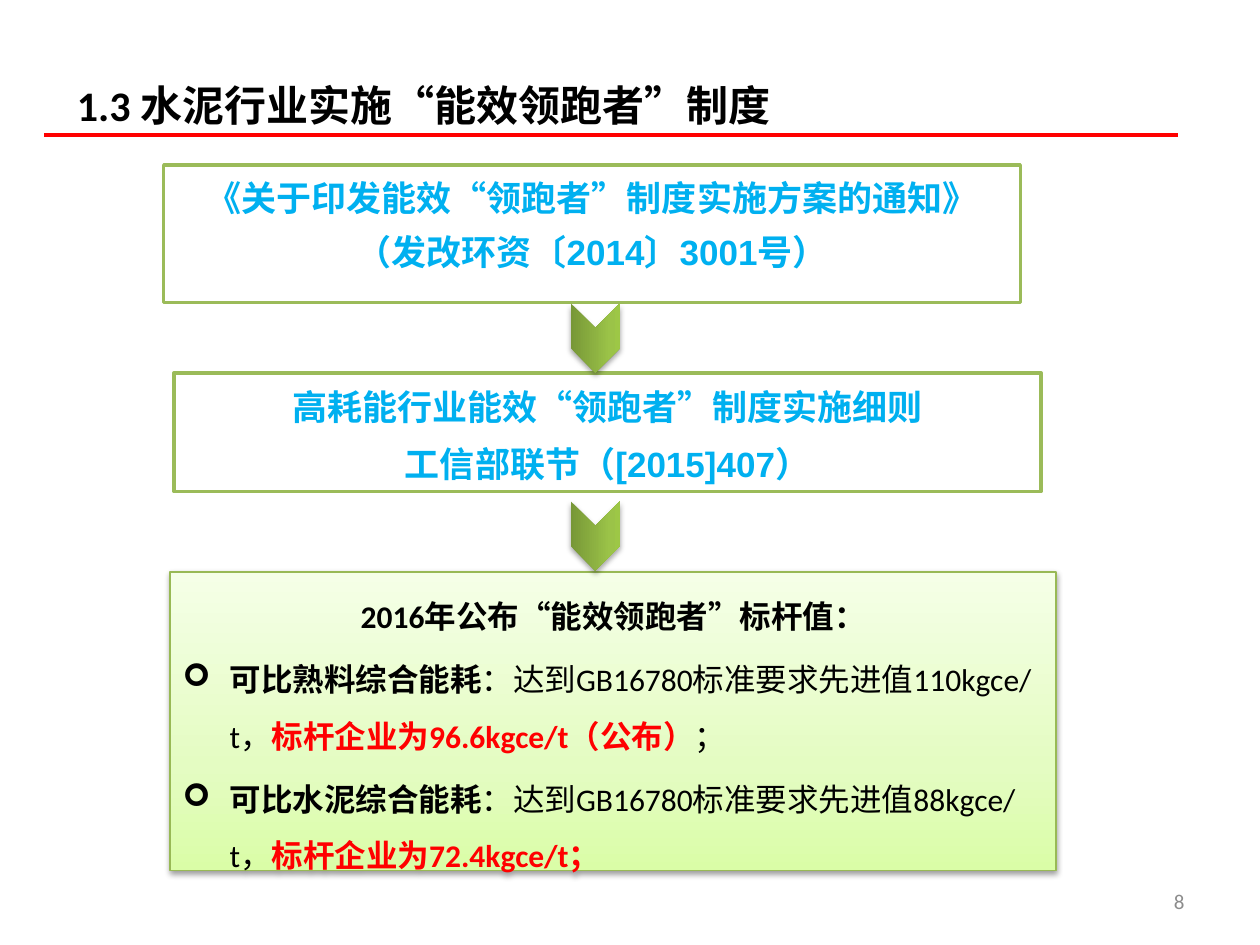
import pptx
import pptx.dml.color
import pptx.enum.shapes
import pptx.enum.text
import pptx.oxml
import pptx.oxml.ns
import pptx.util
from lxml import etree

Cm, Pt = pptx.util.Cm, pptx.util.Pt
SHAPE = pptx.enum.shapes.MSO_SHAPE
ALIGN = pptx.enum.text.PP_ALIGN
ANCHOR = pptx.enum.text.MSO_ANCHOR
qn = pptx.oxml.ns.qn

COLORS = {
    "black": "000000", "white": "FFFFFF", "red": "FF0000", "blue": "00B0F0",
    "grey": "8C8C8C", "green": "9BBB59", "edge": "98B955",
}
PANEL_STOPS = [(0, "DAFDA7"), (35, "E4FCC2"), (100, "F5FFE7")]
ARROW_STOPS = [(0, "779737"), (80, "9BC348"), (100, "9DC746")]


def rgb(name):
    return pptx.dml.color.RGBColor.from_string(COLORS[name])


def add_run(p, text, size, color, bold=True, font="Calibri"):
    r = p.add_run()
    r.text = text
    r.font.size = Pt(size)
    r.font.name = font
    r.font.bold = bold
    r.font.color.rgb = rgb(color)


def add_text_box(slide, box, anchor):
    tf = slide.shapes.add_textbox(*map(Cm, box)).text_frame
    tf.word_wrap = True
    tf.vertical_anchor = anchor
    return tf


def add_shape(slide, kind, box):
    sp = slide.shapes.add_shape(kind, *map(Cm, box))
    sp.shadow.inherit = False
    sp.text_frame.word_wrap = True
    return sp


def next_paragraph(tf, index):
    return tf.paragraphs[0] if index == 0 else tf.add_paragraph()


def set_indent(p, bullet=None):
    """Hanging indent, with an optional bullet character."""
    pPr = p._p.get_or_add_pPr()
    pPr.set("marL", str(Cm(0.95)))
    pPr.set("indent", str(-Cm(0.95)))
    if bullet:
        etree.SubElement(pPr, qn("a:buFont"), typeface="Wingdings")
        etree.SubElement(pPr, qn("a:buChar"), char=bullet)


def set_gradient(sp, stops):
    """Gradient that runs from the bottom edge to the top edge."""
    sp.fill.gradient()
    sp.fill.gradient_angle = 90
    gs_list = sp._element.spPr.find(".//" + qn("a:gsLst"))
    gs_list.clear()
    for pos, color in stops:
        gs = etree.SubElement(gs_list, qn("a:gs"), pos=str(pos * 1000))
        etree.SubElement(gs, qn("a:srgbClr"), val=color)


def set_shadow(sp, opacity, dist):
    effects = sp._element.spPr.find(qn("a:effectLst"))
    shadow = etree.SubElement(
        effects, qn("a:outerShdw"), blurRad=str(Pt(3.1)), dist=str(Pt(dist)),
        dir="5400000", rotWithShape="0")
    color = etree.SubElement(shadow, qn("a:srgbClr"), val=COLORS["black"])
    etree.SubElement(color, qn("a:alpha"), val=str(opacity * 1000))


def add_header(slide, box):
    """Title with a red rule beneath it."""
    left, top, width, height = box
    tf = add_text_box(slide, box, ANCHOR.MIDDLE)
    add_run(tf.paragraphs[0], "1.3 水泥行业实施“能效领跑者”制度", 24, "black")
    x, y = left - 0.41, top + 2.19
    rule = slide.shapes.add_connector(
        pptx.enum.shapes.MSO_CONNECTOR.STRAIGHT,
        Cm(x), Cm(y), Cm(x + width), Cm(y))
    rule.line.color.rgb = rgb("red")
    rule.line.width = Pt(2.5)
    etree.SubElement(rule._element.spPr, qn("a:effectLst"))


def add_policy(slide, box, lines, anchor, space, hanging=False):
    """White box with a green frame and centred blue lines."""
    sp = add_shape(slide, SHAPE.RECTANGLE, box)
    sp.fill.solid()
    sp.fill.fore_color.rgb = rgb("white")
    sp.line.color.rgb = rgb("green")
    sp.line.width = Pt(2)
    tf = sp.text_frame
    tf.vertical_anchor = anchor
    for i, text in enumerate(lines):
        p = next_paragraph(tf, i)
        p.alignment = ALIGN.CENTER
        p.line_spacing = Pt(27)
        p.space_before = Pt(space)
        if hanging:
            set_indent(p)
        add_run(p, text, 20, "blue", font="Arial")


def add_arrow(slide, box):
    """Chevron pointing down."""
    sp = add_shape(slide, SHAPE.CHEVRON, box)
    sp.rotation = 90
    set_gradient(sp, ARROW_STOPS)
    sp.line.fill.background()
    set_shadow(sp, 35, 1.8)


def add_benchmarks(slide, box, heading, items):
    """Green panel with a heading and bulleted benchmark values."""
    sp = add_shape(slide, SHAPE.RECTANGLE, box)
    set_gradient(sp, PANEL_STOPS)
    sp.line.color.rgb = rgb("edge")
    sp.line.width = Pt(0.75)
    set_shadow(sp, 38, 1.6)
    tf = sp.text_frame
    tf.vertical_anchor = ANCHOR.TOP
    for i, runs in enumerate([[(heading, "black", True)]] + items):
        p = next_paragraph(tf, i)
        p.alignment = ALIGN.LEFT if i else ALIGN.CENTER
        p.line_spacing = 1.5
        p.space_before = Pt(3.6)
        set_indent(p, "➢" if i else None)
        for text, color, bold in runs:
            add_run(p, text, 18, color, bold)


def add_page_number(slide, box, number):
    p = add_text_box(slide, box, ANCHOR.MIDDLE).paragraphs[0]
    p.alignment = ALIGN.RIGHT
    add_run(p, number, 12, "grey", bold=False)


def main():
    prs = pptx.Presentation()
    prs.slide_width, prs.slide_height = Cm(25.4), Cm(19.05)
    slide = prs.slides.add_slide(prs.slide_layouts[6])

    add_header(slide, (1.3, 0.53, 22.86, 3.18))
    add_page_number(slide, (18.21, 17.65, 5.92, 1.02), "8")

    # Policy documents
    add_policy(slide, (3.3, 3.33, 17.27, 2.77),
               ["《关于印发能效“领跑者”制度实施方案的通知》",
                "（发改环资〔2014〕3001号）"], ANCHOR.TOP, 4, hanging=True)
    add_benchmarks(slide, (3.43, 11.53, 17.86, 6.02),
                   "2016年公布“能效领跑者”标杆值：", [
        [("可比熟料综合能耗", "black", True),
         ("：达到GB16780标准要求先进值110kgce/t，", "black", False),
         ("标杆企业为96.6kgce/t（公布）", "red", True),
         ("；", "black", False)],
        [("可比水泥综合能耗", "black", True),
         ("：达到GB16780标准要求先进值88kgce/t，", "black", False),
         ("标杆企业为72.4kgce/t；", "red", True)],
    ])
    add_policy(slide, (3.51, 7.52, 17.48, 2.39),
               ["高耗能行业能效“领跑者”制度实施细则",
                "工信部联节（[2015]407）"], ANCHOR.MIDDLE, 6)

    # Arrows between the steps
    for top in (6.32, 10.31):
        add_arrow(slide, (11.3, top, 1.4, 0.99))

    prs.save("out.pptx")


if __name__ == "__main__":
    main()
